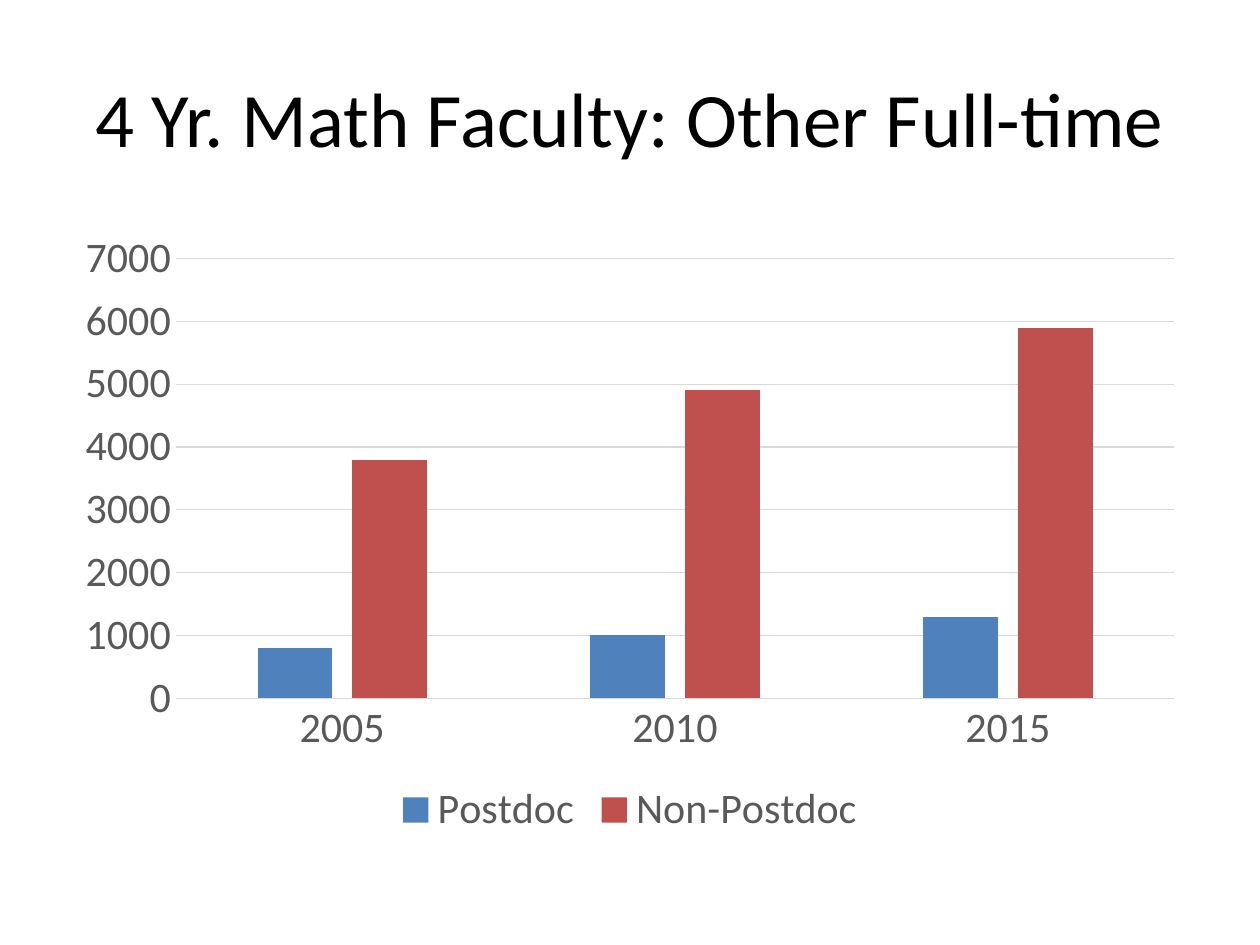
from dataclasses import dataclass

from pptx import Presentation
from pptx.chart.data import CategoryChartData
from pptx.dml.color import RGBColor
from pptx.enum.chart import XL_CHART_TYPE as ChartType
from pptx.enum.chart import XL_LEGEND_POSITION as LegendPos
from pptx.enum.chart import XL_TICK_MARK as TickMark
from pptx.enum.text import MSO_ANCHOR as Anchor
from pptx.enum.text import PP_ALIGN as Align
from pptx.util import Inches, Pt

FONT = "Calibri"
COLORS = {
    "title": "000000",
    "label": "595959",
    "grid": "D9D9D9",
    "postdoc": "4F81BD",
    "non_postdoc": "C0504D",
}
YEARS = ["2005", "2010", "2015"]
MARGIN, CONTENT_WIDTH = Inches(0.5), Inches(9)


@dataclass
class FacultySeries:
    name: str
    counts: list[int]
    color: str


FACULTY = [
    FacultySeries("Postdoc", [800, 1000, 1300], "postdoc"),
    FacultySeries("Non-Postdoc", [3800, 4900, 5900], "non_postdoc"),
]


def rgb(name: str) -> RGBColor:
    return RGBColor.from_string(COLORS[name])


def style_font(font, size: float, color: str) -> None:
    font.name = FONT
    font.size = Pt(size)
    font.color.rgb = rgb(color)


def style_line(line) -> None:
    line.color.rgb = rgb("grid")
    line.width = Pt(0.75)


def add_title(slide, text: str) -> None:
    sp = slide.shapes.add_textbox(MARGIN, Inches(0.3), CONTENT_WIDTH, Inches(1.25))
    tf = sp.text_frame
    tf.word_wrap = True
    tf.vertical_anchor = Anchor.MIDDLE
    p = tf.paragraphs[0]
    p.alignment = Align.CENTER
    r = p.add_run()
    r.text = text
    style_font(r.font, 44, "title")


def add_faculty_chart(slide, faculty: list[FacultySeries]) -> None:
    data = CategoryChartData()
    data.categories = YEARS
    for item in faculty:
        data.add_series(item.name, item.counts)
    chart = slide.shapes.add_chart(
        ChartType.COLUMN_CLUSTERED, MARGIN, Inches(1.75), CONTENT_WIDTH, Inches(4.95), data
    ).chart
    style_font(chart.font, 10, "title")
    chart.has_title = False

    plot = chart.plots[0]
    plot.gap_width, plot.overlap = 219, -27
    plot.vary_by_categories = False
    for series, item in zip(plot.series, faculty):
        series.format.fill.solid()
        series.format.fill.fore_color.rgb = rgb(item.color)
        series.invert_if_negative = False

    for axis in (chart.category_axis, chart.value_axis):
        axis.major_tick_mark = axis.minor_tick_mark = TickMark.NONE
        style_font(axis.tick_labels.font, 24, "label")
    style_line(chart.category_axis.format.line)
    value_axis = chart.value_axis
    value_axis.minimum_scale, value_axis.maximum_scale = 0, 7000
    value_axis.major_unit = 1000
    value_axis.format.line.fill.background()
    style_line(value_axis.major_gridlines.format.line)

    chart.has_legend = True
    chart.legend.position = LegendPos.BOTTOM
    chart.legend.include_in_layout = False
    style_font(chart.legend.font, 24, "label")


def main() -> None:
    prs = Presentation()
    prs.slide_width, prs.slide_height = Inches(10), Inches(7.5)
    s = prs.slides.add_slide(prs.slide_layouts[6])
    add_title(s, "4 Yr. Math Faculty: Other Full-time")
    add_faculty_chart(s, FACULTY)
    prs.save("out.pptx")


if __name__ == "__main__":
    main()
